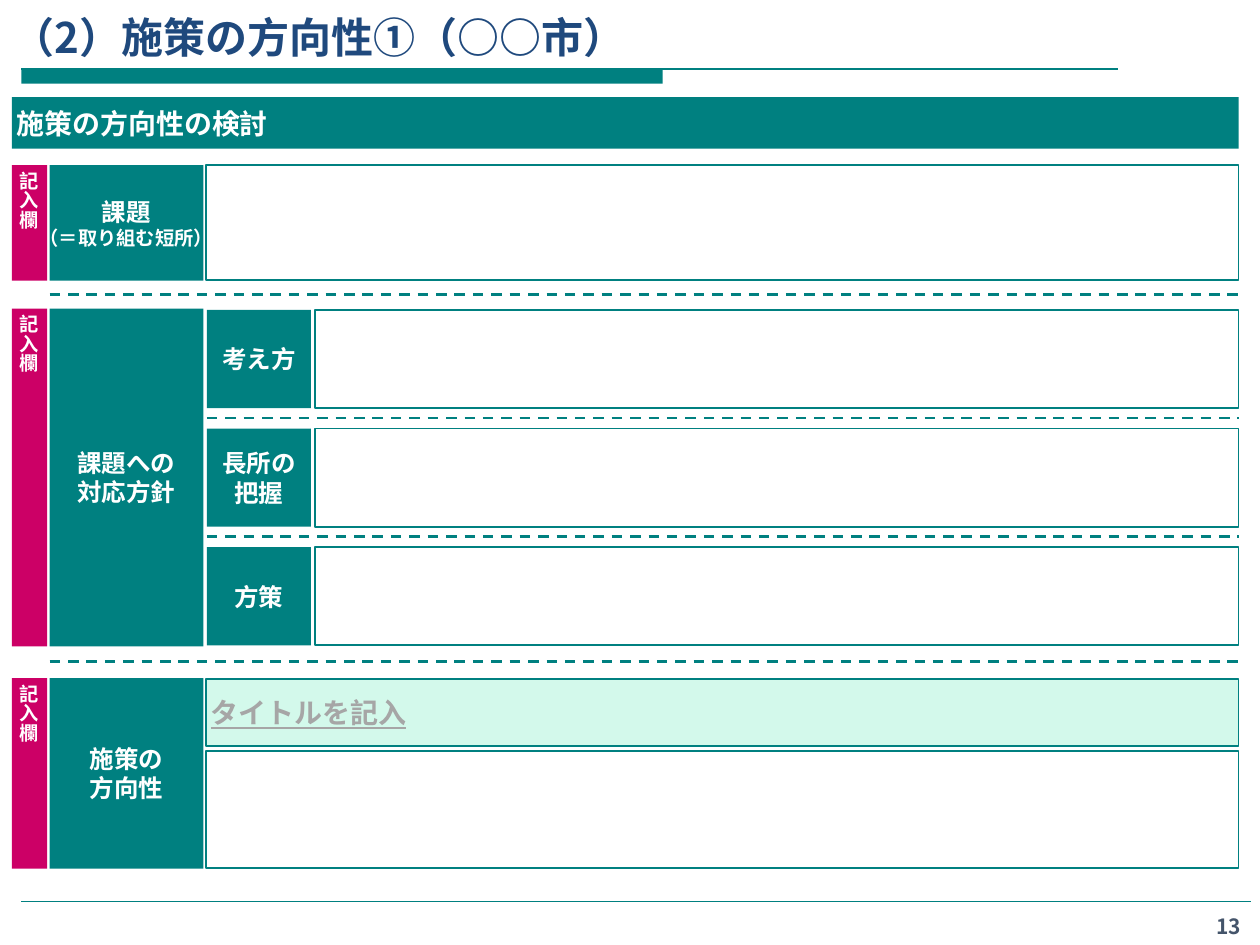
from typing import NamedTuple

from lxml import etree
from pptx import Presentation
from pptx import util as u
from pptx.dml import color
from pptx.enum import dml, shapes, text
from pptx.oxml import ns

FACE = "Noto Sans CJK JP"
TEAL, PINK, MINT, WHITE = "008080", "CC0066", "D3F9EB", "FFFFFF"
NAVY, SLATE, GRAY = "1F497D", "44546A", "A6A6A6"
LEFT, MID, SUB, FIELD, RIGHT = 0.24, 1.0, 4.17, 6.35, 24.97
STEP, HIGH = 2.39, 1.98


class Box(NamedTuple):
    x: float
    y: float
    w: float
    h: float


class Row(NamedTuple):
    top: float
    high: float
    lines: tuple
    sizes: tuple


ROWS = [
    Row(3.33, 2.33, ("課題", "（＝取り組む短所）"), (14, 11)),
    Row(6.22, 6.81, ("課題への", "対応方針"), (14, 14)),
    Row(13.67, 3.84, ("施策の", "方向性"), (14, 14)),
]
SUBS = [("考え方",), ("長所の", "把握"), ("方策",)]


def rgb(code: str) -> color.RGBColor:
    return color.RGBColor.from_string(code)


def place(box: Box) -> list:
    return [u.Cm(v) for v in box]


def write(frame, *lines: str, sizes=(14,), ink=WHITE, align="CENTER",
          anchor="MIDDLE", wrap=False, inset=True, under=False, vert=False) -> None:
    frame.auto_size = text.MSO_AUTO_SIZE.NONE
    frame.word_wrap = wrap
    frame.vertical_anchor = text.MSO_ANCHOR[anchor]
    if inset:
        frame.margin_left = frame.margin_right = u.Cm(0.1)
        frame.margin_top = frame.margin_bottom = u.Cm(0.13)
    if vert:
        frame._txBody.bodyPr.set("vert", "eaVert")
    for i, line in enumerate(lines):
        para = frame.add_paragraph() if i else frame.paragraphs[0]
        para.alignment = text.PP_ALIGN[align]
        run = para.add_run()
        run.text = line
        font = run.font
        font.size = u.Pt(sizes[min(i, len(sizes) - 1)])
        font.bold = True
        if under:
            font.underline = True
        font.color.rgb = rgb(ink)
        font.name = FACE
        etree.SubElement(run._r.get_or_add_rPr(), ns.qn("a:ea"), typeface=FACE)


def block(page, box: Box, fill: str = TEAL, edge: bool = False):
    shape = page.shapes.add_shape(shapes.MSO_SHAPE.RECTANGLE, *place(box))
    shape.shadow.inherit = False
    shape.fill.solid()
    shape.fill.fore_color.rgb = rgb(fill)
    if edge:
        shape.line.color.rgb = rgb(TEAL)
        shape.line.width = u.Pt(1)
    else:
        shape.line.fill.background()
    return shape


def rule(page, x: float, y: float, end: float, dash: bool = False) -> None:
    line = page.shapes.add_connector(
        shapes.MSO_CONNECTOR.STRAIGHT, u.Cm(x), u.Cm(y), u.Cm(end), u.Cm(y))
    line.line.color.rgb = rgb(TEAL)
    line.line.width = u.Pt(1.5 if dash else 0.75)
    if dash:
        line.line.dash_style = dml.MSO_LINE.DASH
    etree.SubElement(line._element.spPr, ns.qn("a:effectLst"))


def main() -> None:
    deck = Presentation()
    deck.slide_width, deck.slide_height = u.Cm(25.4), u.Cm(19.05)
    page = deck.slides.add_slide(deck.slide_layouts[5])

    block(page, Box(0.43, 1.39, 12.93, 0.3))
    rule(page, 0.43, 1.39, 22.53)
    rule(page, 0.43, 18.18, 25.22)

    title = page.shapes.title
    title.left, title.top, title.width, title.height = place(Box(0, 0, 25.4, 1.37))
    write(title.text_frame, "（2）施策の方向性①（○○市）", sizes=(24,), ink=NAVY,
          align="LEFT", anchor="BOTTOM", wrap=True, inset=False)

    head = block(page, Box(LEFT, 1.96, RIGHT - LEFT, 1.04))
    write(head.text_frame, "施策の方向性の検討", sizes=(16,), align="LEFT")

    for row in ROWS:
        label = block(page, Box(MID, row.top, 3.1, row.high))
        write(label.text_frame, *row.lines, sizes=row.sizes)
        tag = block(page, Box(LEFT, row.top, 0.71, row.high), PINK)
        write(tag.text_frame, "記入欄", sizes=(11,), anchor="BOTTOM", vert=True)

    for y in (5.94, 13.34):
        rule(page, MID, y, RIGHT, dash=True)

    for i, lines in enumerate(SUBS):
        y = 6.25 + i * STEP
        label = block(page, Box(SUB, y, 2.1, HIGH))
        write(label.text_frame, *lines)
        block(page, Box(FIELD, y, RIGHT - FIELD, HIGH), WHITE, edge=True)
        if i:
            rule(page, SUB, y - 0.21, RIGHT, dash=True)

    wide = RIGHT - 4.15
    block(page, Box(4.15, 3.33, wide, 2.31), WHITE, edge=True)
    block(page, Box(4.15, 15.14, wide, 2.36), WHITE, edge=True)
    name = block(page, Box(4.15, 13.69, wide, 1.35), MINT, edge=True)
    write(name.text_frame, "タイトルを記入", sizes=(16,), ink=GRAY,
          align="LEFT", under=True)

    number = page.shapes.add_textbox(*place(Box(24.23, 18.29, 1.09, 0.71)))
    write(number.text_frame, "13", sizes=(12,), ink=SLATE, anchor="TOP",
          wrap=True, inset=False)

    deck.save("out.pptx")


if __name__ == "__main__":
    main()
